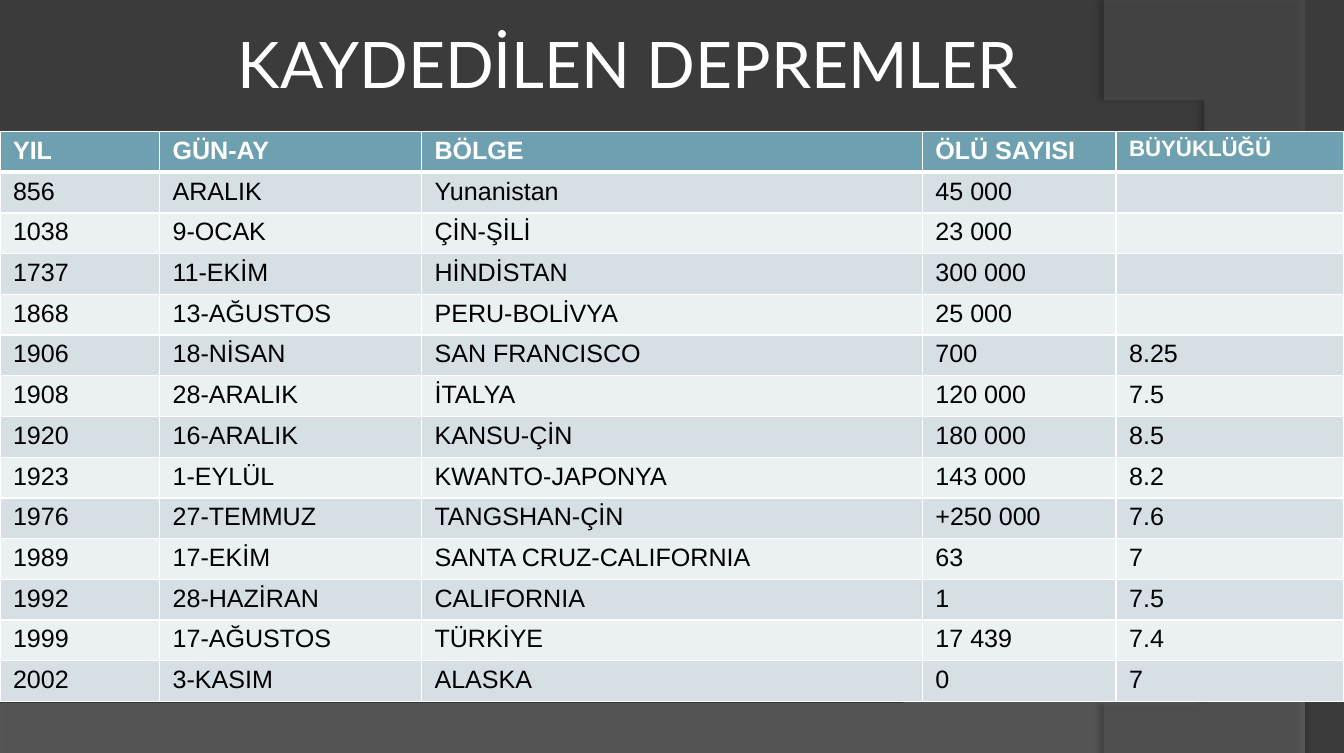
from lxml import etree
from pptx import Presentation
from pptx import util as u
from pptx.dml.color import RGBColor
from pptx.enum import text
from pptx.oxml import parse_xml
from pptx.oxml.ns import nsdecls

COLORS = {
    "background": "3B3B3B", "wave": "7F7F7F", "arc": "5E5E5E",
    "header": "6EA0B0", "odd": "D5DFE4", "even": "EBF0F2",
    "white": "FFFFFF", "black": "000000",
}
HEADERS = ["YIL", "GÜN-AY", "BÖLGE", "ÖLÜ SAYISI", "BÜYÜKLÜĞÜ"]
QUAKES = [
    ["856", "ARALIK", "Yunanistan", "45 000", ""],
    ["1038", "9-OCAK", "ÇİN-ŞİLİ", "23 000", ""],
    ["1737", "11-EKİM", "HİNDİSTAN", "300 000", ""],
    ["1868", "13-AĞUSTOS", "PERU-BOLİVYA", "25 000", ""],
    ["1906", "18-NİSAN", "SAN FRANCISCO", "700", "8.25"],
    ["1908", "28-ARALIK", "İTALYA", "120 000", "7.5"],
    ["1920", "16-ARALIK", "KANSU-ÇİN", "180 000", "8.5"],
    ["1923", "1-EYLÜL", "KWANTO-JAPONYA", "143 000", "8.2"],
    ["1976", "27-TEMMUZ", "TANGSHAN-ÇİN", "+250 000", "7.6"],
    ["1989", "17-EKİM", "SANTA CRUZ-CALIFORNIA", "63", "7"],
    ["1992", "28-HAZİRAN", "CALIFORNIA", "1", "7.5"],
    ["1999", "17-AĞUSTOS", "TÜRKİYE", "17 439", "7.4"],
    ["2002", "3-KASIM", "ALASKA", "0", "7"],
]
COLUMN_WIDTHS = [1.59, 2.61, 4.99, 1.93, 2.27]


def add_run(p, words, font, size, color, bold=False):
    r = p.add_run()
    r.text = words
    r.font.name, r.font.size, r.font.bold = font, u.Pt(size), bold
    r.font.color.rgb = RGBColor.from_string(COLORS[color])


def bezier(a, b, c, d, steps=40):
    ts = [i / steps for i in range(steps + 1)]
    return [tuple((1 - t) ** 3 * a[k] + 3 * (1 - t) ** 2 * t * b[k]
                  + 3 * (1 - t) * t ** 2 * c[k] + t ** 3 * d[k] for k in (0, 1))
            for t in ts]


prs = Presentation()
prs.slide_width, prs.slide_height = u.Inches(13.39), u.Inches(7.5)
s = prs.slides.add_slide(prs.slide_layouts[5])
s.background.fill.solid()
s.background.fill.fore_color.rgb = RGBColor.from_string(COLORS["background"])

# Title
title = s.shapes.title
title.left, title.top = u.Inches(0.79), u.Inches(0)
title.width, title.height = u.Inches(10.93), u.Inches(1.25)
tf = title.text_frame
tf.word_wrap = True
tf.auto_size = text.MSO_AUTO_SIZE.NONE
tf.vertical_anchor = text.MSO_ANCHOR.MIDDLE
tf.margin_left = tf.margin_right = tf.margin_top = tf.margin_bottom = u.Inches(0.05)
p = tf.paragraphs[0]
p.alignment = text.PP_ALIGN.CENTER
add_run(p, "KAYDEDİLEN DEPREMLER", "Lato", 46, "white")

# Translucent background curves: outline, colour, opacity, shadow opacity, distance, angle
wave = [(0, 7.5), (13.39, 7.5)] + bezier((13.39, 5.2), (7.48, 7.29), (5.23, 7.19), (0, 7.05))
arc = [(13.39, 0.02), (13.39, 7.5)] + bezier((11, 7.5), (12.51, 6.19), (13.62, 3), (10.71, 0))
for outline, color, opacity, shade, distance, angle in [
    (wave, "wave", 45, 35, 3.5, 270),
    (arc, "arc", 40, 45, 4, 180),
]:
    builder = s.shapes.build_freeform(*outline[0], scale=u.Inches(1))
    builder.add_line_segments(outline[1:], close=True)
    sp = builder.convert_to_shape()
    sp.line.fill.background()
    sp.fill.solid()
    sp.fill.fore_color.rgb = RGBColor.from_string(COLORS[color])
    srgb = sp.element.spPr.find(".//{*}solidFill/{*}srgbClr")
    etree.SubElement(srgb, srgb.tag.replace("srgbClr", "alpha"), val=str(opacity * 1000))
    sp.element.spPr.append(parse_xml(
        f'<a:effectLst {nsdecls("a")}><a:outerShdw blurRad="{u.Pt(4)}" dist="{u.Pt(distance)}"'
        f' dir="{angle * 60000}" algn="ctr" rotWithShape="0"><a:srgbClr val="{COLORS["black"]}">'
        f'<a:alpha val="{shade * 1000}"/></a:srgbClr></a:outerShdw></a:effectLst>'))
    title.element.addprevious(sp.element)

# Earthquake table
rows = [HEADERS] + QUAKES
table = s.shapes.add_table(len(rows), len(HEADERS), u.Inches(0), u.Inches(1.31),
                           u.Inches(13.39), u.Inches(5.68)).table
for column, width in zip(table.columns, COLUMN_WIDTHS):
    column.width = u.Inches(width)

for i, row in enumerate(rows):
    for j, words in enumerate(row):
        cell = table.cell(i, j)
        cell.margin_left = cell.margin_right = u.Inches(0.13)
        cell.margin_top = cell.margin_bottom = u.Inches(0.05)

        # White borders, heavier below the header
        for side in "LRTB":
            heavy = (i, side) in [(0, "B"), (1, "T")]
            cell._tc.get_or_add_tcPr().append(parse_xml(
                f'<a:ln{side} {nsdecls("a")} w="{u.Pt(3 if heavy else 1)}"><a:solidFill>'
                f'<a:srgbClr val="{COLORS["white"]}"/></a:solidFill></a:ln{side}>'))

        band = "header" if i == 0 else "odd" if i % 2 else "even"
        cell.fill.solid()
        cell.fill.fore_color.rgb = RGBColor.from_string(COLORS[band])
        if words:
            size = 16 if words == "BÜYÜKLÜĞÜ" else 18
            add_run(cell.text_frame.paragraphs[0], words, "Arial", size,
                    "black" if i else "white", bold=i == 0)

prs.save("out.pptx")
